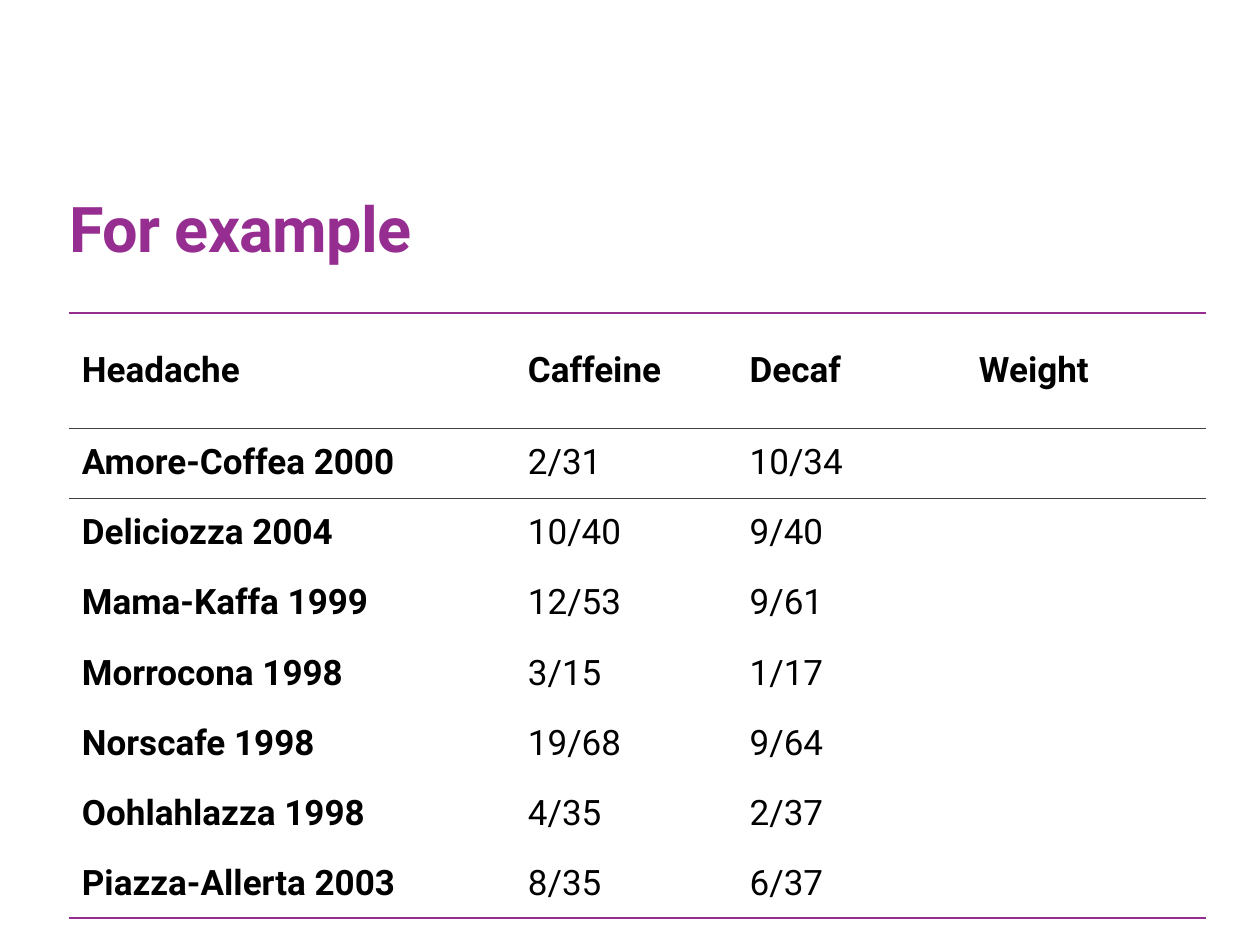
from lxml import etree
from pptx import Presentation
from pptx import util as u
from pptx.dml.color import RGBColor
from pptx.enum import text
from pptx.oxml import ns

WIDTH, HEIGHT = u.Inches(10), u.Inches(7.5)
COLOURS = {"accent": "962D91", "ink": "000000", "rule": "404040"}
NO_GRID_STYLE = "{2D5ABB26-0587-4C30-8999-92F81FD0307C}"

TITLE_BOX = (0.055, 0.188, 0.669, 0.092)
TABLE_BOX = (0.055, 0.331, 0.902, 0.641)
COLUMN_SHARES = (3.54, 1.76, 1.82, 1.9)
HEADER_SHARE = 0.19

TITLE_FORMAT = {"name": "Roboto", "size": u.Pt(36), "bold": True}
CELL_FORMAT = {"name": "Roboto", "size": u.Pt(20)}

TRIALS = [
    ("Headache", "Caffeine", "Decaf", "Weight"),
    ("Amore-Coffea 2000", "2/31", "10/34", ""),
    ("Deliciozza 2004", "10/40", "9/40", ""),
    ("Mama-Kaffa 1999", "12/53", "9/61", ""),
    ("Morrocona 1998", "3/15", "1/17", ""),
    ("Norscafe 1998", "19/68", "9/64", ""),
    ("Oohlahlazza 1998", "4/35", "2/37", ""),
    ("Piazza-Allerta 2003", "8/35", "6/37", ""),
]


def to_slide(box):
    """Turn shares of the slide into lengths."""
    left, top, width, height = box
    return (round(left * WIDTH), round(top * HEIGHT),
            round(width * WIDTH), round(height * HEIGHT))


def write(para, words, colour, formats):
    span = para.add_run()
    span.text = words
    for key, value in formats.items():
        setattr(span.font, key, value)
    span.font.color.rgb = RGBColor.from_string(COLOURS[colour])
    return span


def draw_border(cell, side, colour, points):
    """Rule one side of a cell; call for the top before the bottom."""
    properties = cell._tc.get_or_add_tcPr()
    line = etree.Element(ns.qn(f"a:ln{side}"), w=str(u.Pt(points)))
    fill = etree.SubElement(line, ns.qn("a:solidFill"))
    etree.SubElement(fill, ns.qn("a:srgbClr"), val=COLOURS[colour])
    properties.insert(len(properties.findall(ns.qn("a:lnT"))), line)


def add_title(page, box, words):
    frame = page.shapes.add_textbox(*to_slide(box)).text_frame
    settings = {"word_wrap": True, "vertical_anchor": text.MSO_ANCHOR.BOTTOM,
                "margin_left": 0, "margin_right": 0,
                "margin_top": 0, "margin_bottom": 0}
    for key, value in settings.items():
        setattr(frame, key, value)
    span = write(frame.paragraphs[0], words, "accent", TITLE_FORMAT)
    span.font._element.set("spc", "-40")


def add_trial_table(page, box, records):
    left, top, width, height = to_slide(box)
    last = len(records) - 1
    frame = page.shapes.add_table(len(records), len(COLUMN_SHARES),
                                  left, top, width, height)
    table = frame.table
    table.horz_banding = False
    table._tbl.tblPr.find(ns.qn("a:tableStyleId")).text = NO_GRID_STYLE

    for column, share in zip(table.columns, COLUMN_SHARES):
        column.width = round(width * share / sum(COLUMN_SHARES))
    for index, row in enumerate(table.rows):
        share = (1 - HEADER_SHARE) / last if index else HEADER_SHARE
        row.height = round(height * share)

    for r, record in enumerate(records):
        for c, words in enumerate(record):
            cell = table.cell(r, c)
            cell.vertical_anchor = text.MSO_ANCHOR.MIDDLE
            cell.fill.background()
            if words:
                write(cell.text_frame.paragraphs[0], words, "ink",
                      {**CELL_FORMAT, "bold": r == 0 or c == 0})
            if r == 0:
                draw_border(cell, "T", "accent", 1)
                draw_border(cell, "B", "rule", 0.5)
            elif r == 1:
                draw_border(cell, "T", "rule", 0.5)
            elif r == last:
                draw_border(cell, "B", "accent", 1)


def main():
    deck = Presentation()
    deck.slide_width, deck.slide_height = WIDTH, HEIGHT
    page = deck.slides.add_slide(deck.slide_layouts[6])
    add_trial_table(page, TABLE_BOX, TRIALS)
    add_title(page, TITLE_BOX, "For example")
    deck.save("out.pptx")


if __name__ == "__main__":
    main()
